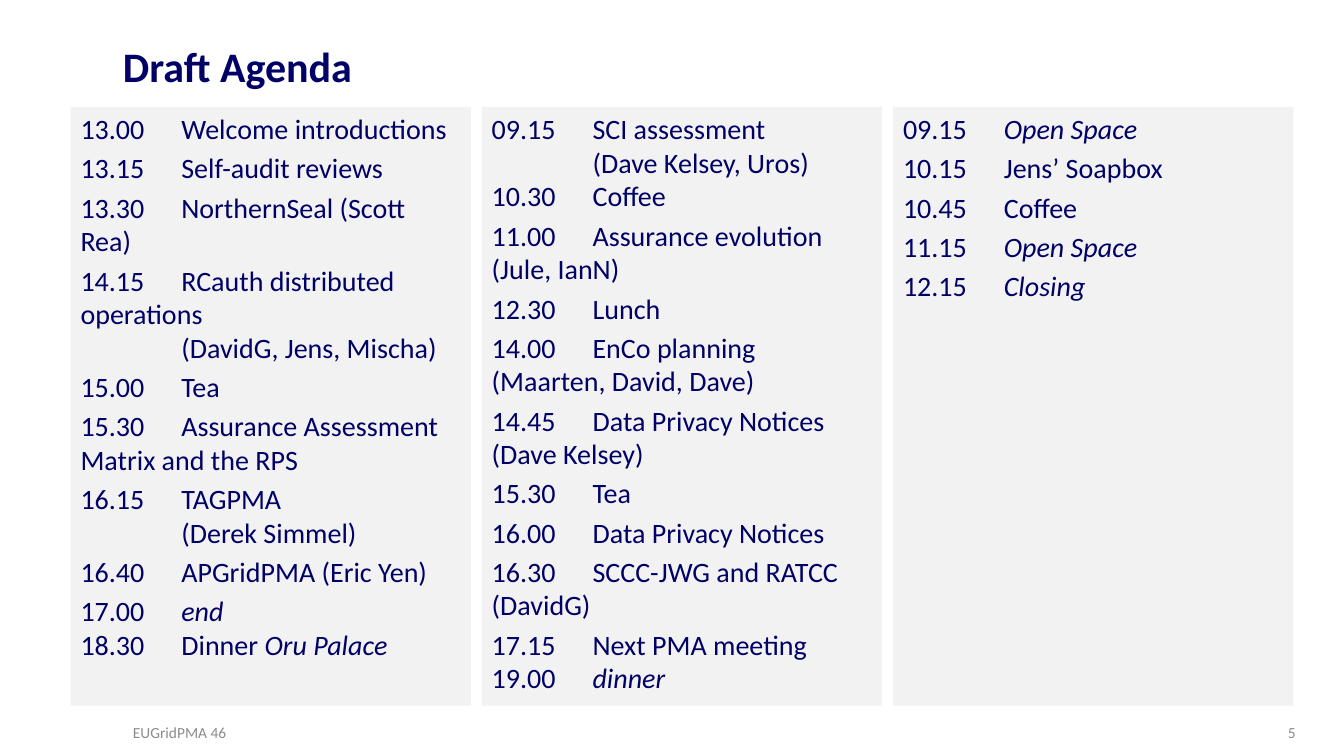
from dataclasses import dataclass

from lxml import etree
from pptx import Presentation
from pptx import util as u
from pptx.dml.color import RGBColor
from pptx.enum import shapes, text
from pptx.oxml.ns import qn

NAVY, GREY, PANEL = "000066", "8C8C8C", "F2F2F2"
FONT = "Calibri"

prs = Presentation()
prs.slide_width, prs.slide_height = u.Inches(13.33), u.Inches(7.5)
slide = prs.slides.add_slide(prs.slide_layouts[6])


@dataclass
class Box:
    """Position and size in percent of the slide's width and height."""
    left: float
    top: float
    width: float
    height: float

    def emu(self) -> tuple[int, int, int, int]:
        w, h = prs.slide_width / 100, prs.slide_height / 100
        return (round(self.left * w), round(self.top * h),
                round(self.width * w), round(self.height * h))


@dataclass
class Label:
    words: str
    box: Box
    size: int
    color: str
    bold: bool = False
    align: text.PP_ALIGN = text.PP_ALIGN.LEFT
    inset: float = 0.1


def rgb(color: str) -> RGBColor:
    return RGBColor.from_string(color)


def style(p, size: int, color: str, bold: bool = False) -> None:
    p.font.name, p.font.size, p.font.bold = FONT, u.Pt(size), bold
    p.font.color.rgb = rgb(color)


def add_label(label: Label) -> None:
    tf = slide.shapes.add_textbox(*label.box.emu()).text_frame
    tf.word_wrap = True
    tf.vertical_anchor = text.MSO_ANCHOR.MIDDLE
    tf.margin_left = tf.margin_right = u.Inches(label.inset)
    p = tf.paragraphs[0]
    p.text, p.alignment = label.words, label.align
    style(p, label.size, label.color, label.bold)


def add_tab_stop(p, inches: float) -> None:
    stops = etree.SubElement(p._p.get_or_add_pPr(), qn("a:tabLst"))
    etree.SubElement(stops, qn("a:tab"), pos=str(u.Inches(inches)), algn="l")


def add_entry(p, entry: str) -> None:
    """Write one entry; asterisks enclose italics, newlines break lines."""
    p.alignment = text.PP_ALIGN.LEFT
    add_tab_stop(p, 1)
    style(p, 20, NAVY)
    for i, line in enumerate(entry.split("\n")):
        if i:
            p.add_line_break()
        for j, part in enumerate(line.split("*")):
            if part:
                r = p.add_run()
                r.text = part
                if j % 2:
                    r.font.italic = True


def add_day(box: Box, entries: list[str]) -> None:
    sp = slide.shapes.add_shape(shapes.MSO_SHAPE.RECTANGLE, *box.emu())
    sp.shadow.inherit = False
    sp.fill.solid()
    sp.fill.fore_color.rgb = rgb(PANEL)
    sp.line.fill.background()
    tf = sp.text_frame
    tf.word_wrap = True
    tf.vertical_anchor = text.MSO_ANCHOR.TOP
    for i, entry in enumerate(entries):
        p = tf.add_paragraph() if i else tf.paragraphs[0]
        if i:
            p.space_before = u.Pt(4)
        add_entry(p, entry)


# Agenda, one list per day
DAYS = [
    ["13.00\tWelcome introductions",
     "13.15\tSelf-audit reviews",
     "13.30\tNorthernSeal (Scott Rea)",
     "14.15\tRCauth distributed \toperations \n\t(DavidG, Jens, Mischa)",
     "15.00\tTea",
     "15.30\tAssurance Assessment \tMatrix and the RPS",
     "16.15\tTAGPMA \n\t(Derek Simmel)",
     "16.40\tAPGridPMA (Eric Yen)",
     "17.00\t*end*\n18.30\tDinner *Oru Palace*"],
    ["09.15\tSCI assessment\n\t(Dave Kelsey, Uros)\n10.30\tCoffee",
     "11.00\tAssurance evolution \t(Jule, IanN)",
     "12.30\tLunch",
     "14.00\tEnCo planning \t(Maarten, David, Dave)",
     "14.45\tData Privacy Notices \t(Dave Kelsey)",
     "15.30\tTea",
     "16.00\tData Privacy Notices",
     "16.30\tSCCC-JWG and RATCC \t(DavidG)",
     "17.15\tNext PMA meeting\n19.00\t*dinner*"],
    ["09.15\t*Open Space*",
     "10.15\tJens’ Soapbox",
     "10.45\tCoffee",
     "11.15\t*Open Space*",
     "12.15\t*Closing*"],
]

# Title and footer
LABELS = [
    Label("Draft Agenda", Box(9.15, 2.27, 88, 12.8), 30, NAVY, bold=True, inset=0),
    Label("EUGridPMA 46", Box(9.15, 94.27, 63, 5.33), 11, GREY),
    Label("5", Box(74.65, 94.27, 22.5, 5.33), 11, GREY, align=text.PP_ALIGN.RIGHT),
]
for label in LABELS:
    add_label(label)

# Day columns
for column, entries in enumerate(DAYS):
    add_day(Box(5.25 + 30.6 * column, 14.13, 29.78, 79.2), entries)

prs.save("out.pptx")
